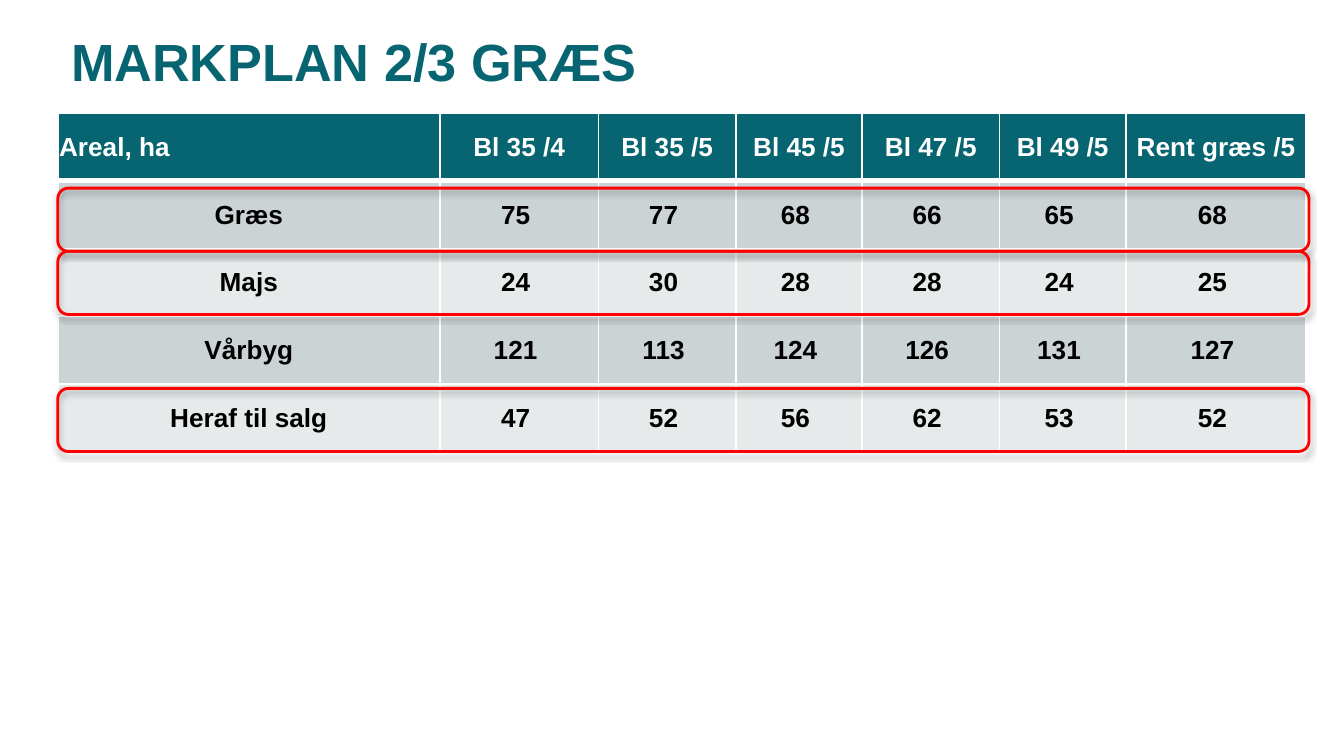
from lxml.etree import SubElement
from pptx import Presentation
from pptx.dml.color import RGBColor as RGB
from pptx.enum.shapes import MSO_SHAPE as Shape
from pptx.enum.text import MSO_ANCHOR as Anchor, PP_ALIGN as Align
from pptx.oxml import parse_xml
from pptx.oxml.ns import nsdecls, qn
from pptx.util import Inches, Pt

COLORS = {
    "teal": "076471",
    "white": "FFFFFF",
    "black": "000000",
    "dark_band": "CCD3D5",
    "light_band": "E7EAEB",
    "red": "FF0000",
}
TITLE = "MARKPLAN 2/3 GRÆS"
HEADINGS = ["Areal, ha", "Bl 35 /4", "Bl 35 /5", "Bl 45 /5", "Bl 47 /5", "Bl 49 /5", "Rent græs /5"]
CROPS = [
    ("Græs", 75, 77, 68, 66, 65, 68),
    ("Majs", 24, 30, 28, 28, 24, 25),
    ("Vårbyg", 121, 113, 124, 126, 131, 127),
    ("Heraf til salg", 47, 52, 56, 62, 53, 52),
]
SLIDE_WIDTH = 10
COLUMN_SHARES = [2.84, 1.18, 1.02, 0.94, 1.02, 0.94, 1.34]
LEFT, TABLE_TOP, WIDTH, TABLE_HEIGHT = 0.43, 0.84, 9.29, 2.52
HIGHLIGHT_TOPS = [1.4, 1.87, 2.89]
HIGHLIGHT_WIDTH, HIGHLIGHT_HEIGHT = 9.31, 0.47


def write(frame, text, size=14, color="black", align=Align.CENTER):
    paragraph = frame.paragraphs[0]
    paragraph.alignment = align
    run = paragraph.add_run()
    run.text = text
    run.font.name = "Arial"
    run.font.size = Pt(size)
    run.font.bold = True
    run.font.color.rgb = RGB.from_string(COLORS[color])


def add_borders(cell, top=1, bottom=1):
    properties = cell._tc.get_or_add_tcPr()
    for place, (side, weight) in enumerate([("L", 1), ("R", 1), ("T", top), ("B", bottom)]):
        properties.insert(place, parse_xml(
            f'<a:ln{side} {nsdecls("a")} w="{Pt(weight)}"><a:solidFill>'
            f'<a:srgbClr val="{COLORS["white"]}"/></a:solidFill></a:ln{side}>'))


def add_shadow(shape):
    shape.shadow.inherit = False
    effects = shape._element.spPr.find(qn("a:effectLst"))
    shadow = SubElement(effects, qn("a:outerShdw"), blurRad=str(Pt(3.1)), dist=str(Pt(1.8)),
                        dir="5400000", rotWithShape="0")
    tint = SubElement(shadow, qn("a:srgbClr"), val=COLORS["black"])
    SubElement(tint, qn("a:alpha"), val="35000")


def add_field_table(slide):
    rows = [HEADINGS] + [[name] + [f"{area} " for area in areas] for name, *areas in CROPS]
    table = slide.shapes.add_table(len(rows), len(HEADINGS), Inches(LEFT), Inches(TABLE_TOP),
                                   Inches(WIDTH), Inches(TABLE_HEIGHT)).table
    for column, share in zip(table.columns, COLUMN_SHARES):
        column.width = Inches(WIDTH * share / sum(COLUMN_SHARES))
    for r, texts in enumerate(rows):
        table.rows[r].height = Inches(TABLE_HEIGHT / len(rows))
        band = "teal" if r == 0 else ("light_band", "dark_band")[r % 2]
        for c, text in enumerate(texts):
            cell = table.cell(r, c)
            cell.fill.solid()
            cell.fill.fore_color.rgb = RGB.from_string(COLORS[band])
            cell.vertical_anchor = Anchor.MIDDLE
            cell.margin_left = cell.margin_right = cell.margin_top = Inches(0.01)
            cell.margin_bottom = 0
            add_borders(cell, top=3 if r == 1 else 1, bottom=3 if r == 0 else 1)
            write(cell.text_frame, text, color="white" if r == 0 else "black",
                  align=Align.LEFT if r == c == 0 else Align.CENTER)


def add_highlight(slide, top):
    highlight = slide.shapes.add_shape(Shape.ROUNDED_RECTANGLE, Inches(LEFT), Inches(top),
                                       Inches(HIGHLIGHT_WIDTH), Inches(HIGHLIGHT_HEIGHT))
    highlight.fill.background()
    highlight.line.color.rgb = RGB.from_string(COLORS["red"])
    highlight.line.width = Pt(1.5)
    add_shadow(highlight)


def main():
    deck = Presentation()
    deck.slide_width, deck.slide_height = Inches(SLIDE_WIDTH), Inches(SLIDE_WIDTH * 9 / 16)
    slide = deck.slides.add_slide(deck.slide_layouts[6])
    add_field_table(slide)
    title = slide.shapes.add_textbox(Inches(LEFT), Inches(-0.02), Inches(WIDTH), Inches(0.94))
    title.text_frame.word_wrap = True
    title.text_frame.vertical_anchor = Anchor.MIDDLE
    write(title.text_frame, TITLE, size=28, color="teal", align=Align.LEFT)
    for top in HIGHLIGHT_TOPS:
        add_highlight(slide, top)
    deck.save("out.pptx")


if __name__ == "__main__":
    main()
